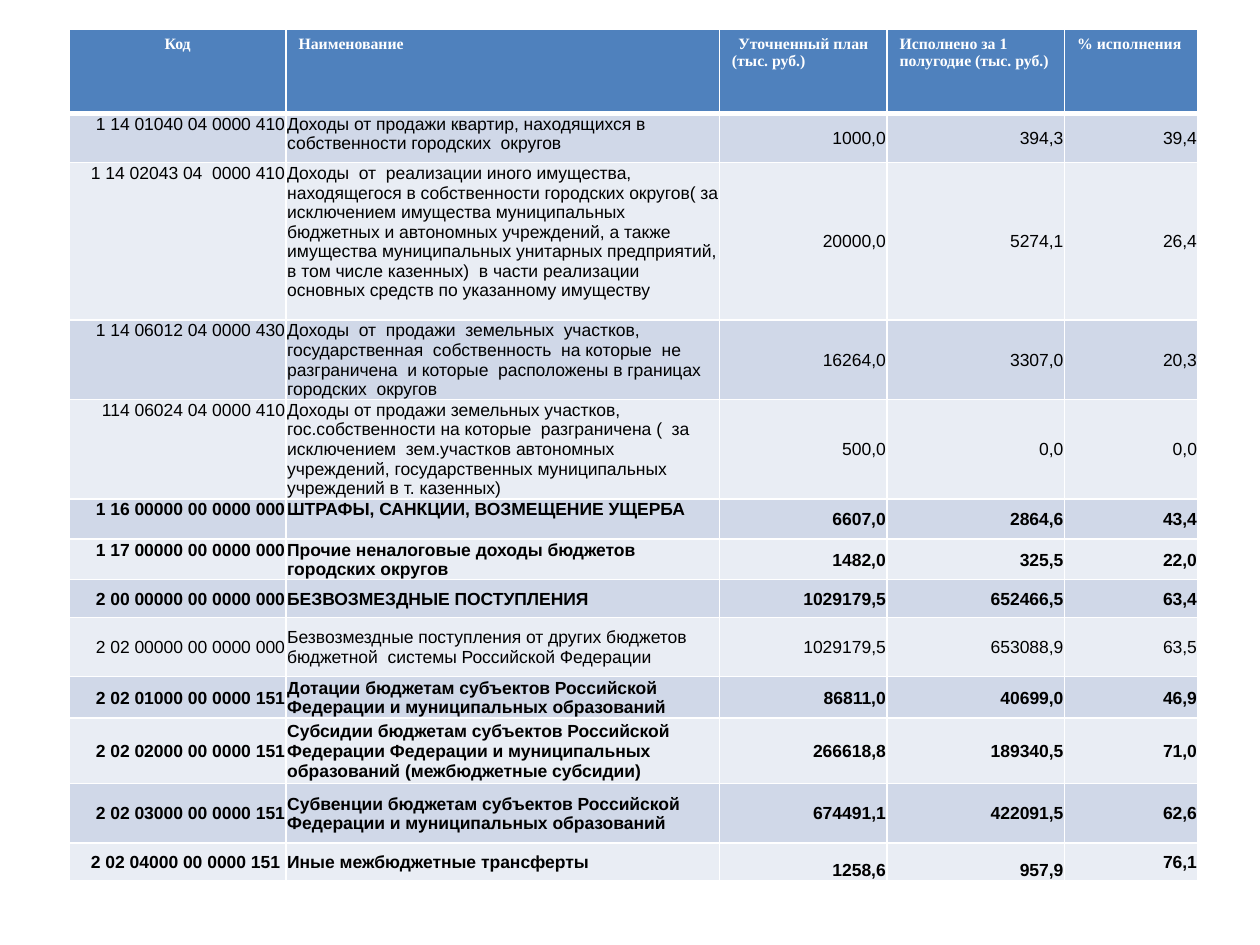
"""Build a slide with a table of budget revenue execution."""
import lxml.etree
import pptx
import pptx.dml.color
import pptx.enum.text
import pptx.oxml.ns
import pptx.util

Inches = pptx.util.Inches
Align = pptx.enum.text.PP_ALIGN
Anchor = pptx.enum.text.MSO_ANCHOR

COLORS = {"header": "4F81BD", "odd": "D0D8E8", "even": "E9EDF4", "white": "FFFFFF", "black": "000000"}
TABLE_LEFT, TABLE_TOP = 0.55, 0.23
COLUMN_WIDTHS = [1.72, 3.44, 1.33, 1.41, 1.06]
ROW_HEIGHTS = [0.67, 0.39, 1.25, 0.63, 0.79, 0.32, 0.32, 0.3, 0.47, 0.33, 0.52, 0.47, 0.3]
FIRST_MIDDLE_ROW = 7
PLAIN_ROWS = {1, 2, 3, 4, 8}

HEADERS = [
    (["Код"], [Align.CENTER]),
    (["Наименование"], [Align.LEFT]),
    (["Уточненный план", "(тыс. руб.)"], [Align.CENTER, Align.LEFT]),
    (["Исполнено за 1 полугодие (тыс. руб.)"], [Align.LEFT]),
    (["% исполнения"], [Align.LEFT]),
]
RECORDS = [
    ("1 14 01040 04 0000 410",
     "Доходы от продажи квартир, находящихся в собственности городских  округов",
     "1000,0", "394,3", "39,4"),
    ("1 14 02043 04  0000 410",
     "Доходы  от  реализации иного имущества, находящегося в собственности городских "
     "округов( за исключением имущества муниципальных бюджетных и автономных учреждений, "
     "а также имущества муниципальных унитарных предприятий, в том числе казенных)  в части "
     "реализации основных средств по указанному имуществу",
     "20000,0", "5274,1", "26,4"),
    ("1 14 06012 04 0000 430",
     "Доходы  от  продажи  земельных  участков, государственная  собственность  на которые  не "
     "разграничена  и которые  расположены в границах городских  округов",
     "16264,0", "3307,0", "20,3"),
    ("114 06024 04 0000 410",
     "Доходы от продажи земельных участков, гос.собственности на которые  разграничена (  за "
     "исключением  зем.участков автономных учреждений, государственных муниципальных "
     "учреждений в т. казенных)",
     "500,0", "0,0", "0,0"),
    ("1 16 00000 00 0000 000", "ШТРАФЫ, САНКЦИИ, ВОЗМЕЩЕНИЕ УЩЕРБА", "6607,0", "2864,6", "43,4"),
    ("1 17 00000 00 0000 000", "Прочие неналоговые доходы бюджетов городских округов",
     "1482,0", "325,5", "22,0"),
    ("2 00 00000 00 0000 000", "БЕЗВОЗМЕЗДНЫЕ ПОСТУПЛЕНИЯ", "1029179,5", "652466,5", "63,4"),
    ("2 02 00000 00 0000 000",
     "Безвозмездные поступления от других бюджетов бюджетной  системы Российской Федерации",
     "1029179,5", "653088,9", "63,5"),
    ("2 02 01000 00 0000 151",
     "Дотации бюджетам субъектов Российской Федерации и муниципальных образований",
     "86811,0", "40699,0", "46,9"),
    ("2 02 02000 00 0000 151",
     "Субсидии бюджетам субъектов Российской Федерации Федерации и муниципальных образований "
     "(межбюджетные субсидии)",
     "266618,8", "189340,5", "71,0"),
    ("2 02 03000 00 0000 151",
     "Субвенции бюджетам субъектов Российской Федерации и муниципальных образований",
     "674491,1", "422091,5", "62,6"),
    ("2 02 04000 00 0000 151 ", "Иные межбюджетные трансферты", "1258,6", "957,9", "76,1"),
]


def rgb(name):
    return pptx.dml.color.RGBColor.from_string(COLORS[name])


def write_text(cell, lines, alignments, font="Arial", size=10, color="black", bold=False):
    frame = cell.text_frame
    for index, (line, alignment) in enumerate(zip(lines, alignments)):
        paragraph = frame.add_paragraph() if index else frame.paragraphs[0]
        paragraph.alignment = alignment
        run = paragraph.add_run()
        run.text = line
        run.font.name = font
        run.font.size = pptx.util.Pt(size)
        run.font.bold = bold
        run.font.color.rgb = rgb(color)


def set_borders(cell, top=1, bottom=1):
    qn = pptx.oxml.ns.qn
    properties = cell._tc.get_or_add_tcPr()
    for position, (side, width) in enumerate([("L", 1), ("R", 1), ("T", top), ("B", bottom)]):
        line = lxml.etree.Element(qn(f"a:ln{side}"), w=str(pptx.util.Pt(width)))
        fill = lxml.etree.SubElement(line, qn("a:solidFill"))
        lxml.etree.SubElement(fill, qn("a:srgbClr"), val=COLORS["white"])
        properties.insert(position, line)


def style_cell(cell, fill, **borders):
    cell.fill.solid()
    cell.fill.fore_color.rgb = rgb(fill)
    set_borders(cell, **borders)


def fill_header(table):
    for column, (lines, alignments) in enumerate(HEADERS):
        cell = table.cell(0, column)
        style_cell(cell, "header", bottom=3)
        write_text(cell, lines, alignments, font="Times New Roman", size=9, color="white", bold=True)


def choose_anchor(row, column):
    if row == len(RECORDS) and column in (2, 3):
        return Anchor.BOTTOM
    return Anchor.MIDDLE if column > 1 or row >= FIRST_MIDDLE_ROW else Anchor.TOP


def fill_records(table):
    for row, record in enumerate(RECORDS, start=1):
        for column, text in enumerate(record):
            cell = table.cell(row, column)
            cell.margin_left = cell.margin_right = cell.margin_top = Inches(0.01)
            cell.margin_bottom = 0
            cell.vertical_anchor = choose_anchor(row, column)
            style_cell(cell, "odd" if row % 2 else "even", top=3 if row == 1 else 1)
            alignment = Align.LEFT if column == 1 else Align.RIGHT
            write_text(cell, [text], [alignment], bold=row not in PLAIN_ROWS)


def main():
    presentation = pptx.Presentation()
    presentation.slide_width, presentation.slide_height = Inches(10), Inches(7.5)
    slide = presentation.slides.add_slide(presentation.slide_layouts[6])
    table = slide.shapes.add_table(
        len(ROW_HEIGHTS), len(COLUMN_WIDTHS), Inches(TABLE_LEFT), Inches(TABLE_TOP),
        Inches(sum(COLUMN_WIDTHS)), Inches(sum(ROW_HEIGHTS))).table
    for column, width in zip(table.columns, COLUMN_WIDTHS):
        column.width = Inches(width)
    for row, height in zip(table.rows, ROW_HEIGHTS):
        row.height = Inches(height)
    fill_header(table)
    fill_records(table)
    presentation.save("out.pptx")


if __name__ == "__main__":
    main()
